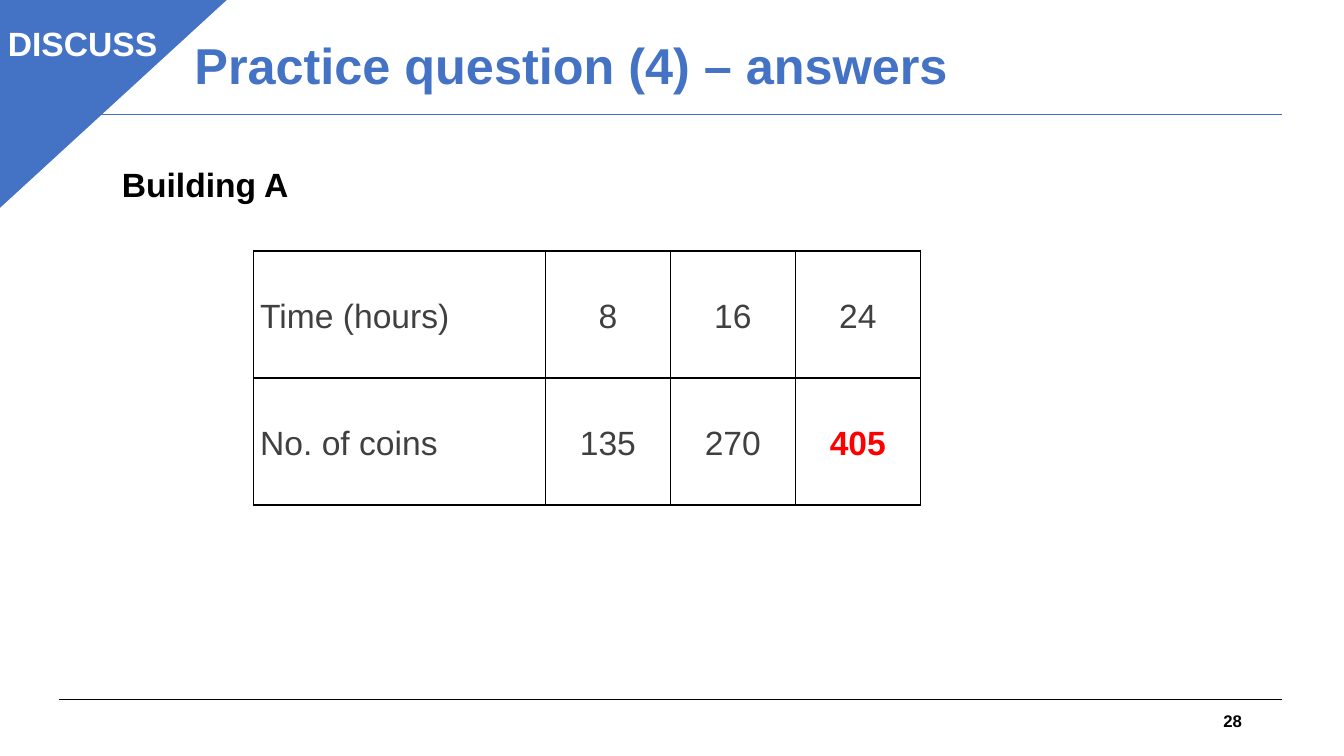
from lxml.etree import SubElement
from pptx import Presentation
from pptx.dml.color import RGBColor
from pptx.enum.shapes import MSO_CONNECTOR, MSO_SHAPE
from pptx.enum.text import MSO_ANCHOR, MSO_AUTO_SIZE, PP_ALIGN
from pptx.oxml.ns import qn
from pptx.util import Inches, Pt

COLORS = {
    "accent": "4472C4",
    "text": "000000",
    "cell": "404040",
    "answer": "FF0000",
    "white": "FFFFFF",
}


def rgb(name):
    return RGBColor.from_string(COLORS[name])


class AnswerSlide:
    font_name = "Arial"
    body_size = 24

    def __init__(self, deck):
        self.width, self.height = deck.slide_width, deck.slide_height
        self.slide = deck.slides.add_slide(deck.slide_layouts[6])

    def x(self, percent):
        return round(self.width * percent / 100)

    def y(self, percent):
        return round(self.height * percent / 100)

    def box(self, left, top, width, height):
        return self.x(left), self.y(top), self.x(width), self.y(height)

    def style(self, paragraph, color, size=body_size, bold=True):
        font = paragraph.font
        font.name, font.size, font.bold = self.font_name, Pt(size), bold
        font.color.rgb = rgb(color)

    def rule(self, top, color, left=4.42, right=95.4):
        line = self.slide.shapes.add_connector(
            MSO_CONNECTOR.STRAIGHT, self.x(left), self.y(top), self.x(right), self.y(top))
        line.line.color.rgb = rgb(color)
        line.line.width = Pt(0.75)
        SubElement(line._element.spPr, qn("a:effectLst"))

    def corner(self, *place):
        flag = self.slide.shapes.add_shape(MSO_SHAPE.ISOSCELES_TRIANGLE, *self.box(*place))
        flag.adjustments[0] = 0
        flag.rotation = 180
        flag._element.spPr.xfrm.set("flipH", "1")
        flag.shadow.inherit = False
        flag.fill.solid()
        flag.fill.fore_color.rgb = rgb("accent")
        flag.line.color.rgb = rgb("accent")
        flag.line.width = Pt(1)

    def text(self, words, place, color, size=body_size, anchor=MSO_ANCHOR.TOP,
             align=PP_ALIGN.LEFT, spacing=None, wrap=True, grow=False):
        frame = self.slide.shapes.add_textbox(*self.box(*place)).text_frame
        frame.word_wrap = wrap
        frame.vertical_anchor = anchor
        frame.auto_size = MSO_AUTO_SIZE.SHAPE_TO_FIT_TEXT if grow else MSO_AUTO_SIZE.NONE
        paragraph = frame.paragraphs[0]
        paragraph.text = words
        paragraph.alignment = align
        paragraph.line_spacing = spacing
        self.style(paragraph, color, size)

    def cell_border(self, cell):
        properties = cell._tc.get_or_add_tcPr()
        for position, side in enumerate(("a:lnL", "a:lnR", "a:lnT", "a:lnB")):
            edge = properties.makeelement(qn(side), {"w": str(Pt(1))})
            fill = SubElement(edge, qn("a:solidFill"))
            SubElement(fill, qn("a:srgbClr"), val=COLORS["text"])
            properties.insert(position, edge)

    def table(self, rows, left, top, column_widths, row_height, answer):
        place = self.box(left, top, sum(column_widths), row_height * len(rows))
        grid = self.slide.shapes.add_table(len(rows), len(column_widths), *place).table
        grid.first_row = grid.horz_banding = False
        for column, width in zip(grid.columns, column_widths):
            column.width = self.x(width)
        for r, values in enumerate(rows):
            grid.rows[r].height = self.y(row_height)
            for c, value in enumerate(values):
                cell = grid.cell(r, c)
                cell.fill.background()
                cell.vertical_anchor = MSO_ANCHOR.MIDDLE
                cell.margin_left = cell.margin_right = self.x(0.53)
                cell.margin_top = cell.margin_bottom = 0
                paragraph = cell.text_frame.paragraphs[0]
                paragraph.text = value
                paragraph.alignment = PP_ALIGN.CENTER if c else PP_ALIGN.LEFT
                paragraph.line_spacing = 1.15
                paragraph.space_after = Pt(4)
                solved = value == answer
                self.style(paragraph, "answer" if solved else "cell", bold=solved)
                self.cell_border(cell)


def main():
    deck = Presentation()
    deck.slide_width, deck.slide_height = Inches(13.33), Inches(7.5)
    page = AnswerSlide(deck)
    page.rule(92.53, "text")
    page.rule(15.2, "accent")
    page.text("Practice question (4) – answers", (13.73, 1.6, 65.18, 14.8), "accent",
              size=36, anchor=MSO_ANCHOR.MIDDLE, spacing=0.9)
    page.corner(-0.23, -0.27, 17.18, 28)
    page.text("DISCUSS", (-0.15, 2.4, 13.13, 6.67), "white", grow=True)
    page.text("28", (70.65, 92.67, 22.5, 5.33), "text", size=12,
              anchor=MSO_ANCHOR.MIDDLE, align=PP_ALIGN.RIGHT)
    coins_by_time = [
        ["Time (hours)", "8", "16", "24"],
        ["No. of coins", "135", "270", "405"],
    ]
    page.table(coins_by_time, 18.83, 33.2, [21.75] + [9.3] * 3, 16.8, answer="405")
    page.text("Building A", (8.33, 21.07, 14.03, 6.67), "text", wrap=False, grow=True)
    deck.save("out.pptx")


if __name__ == "__main__":
    main()
